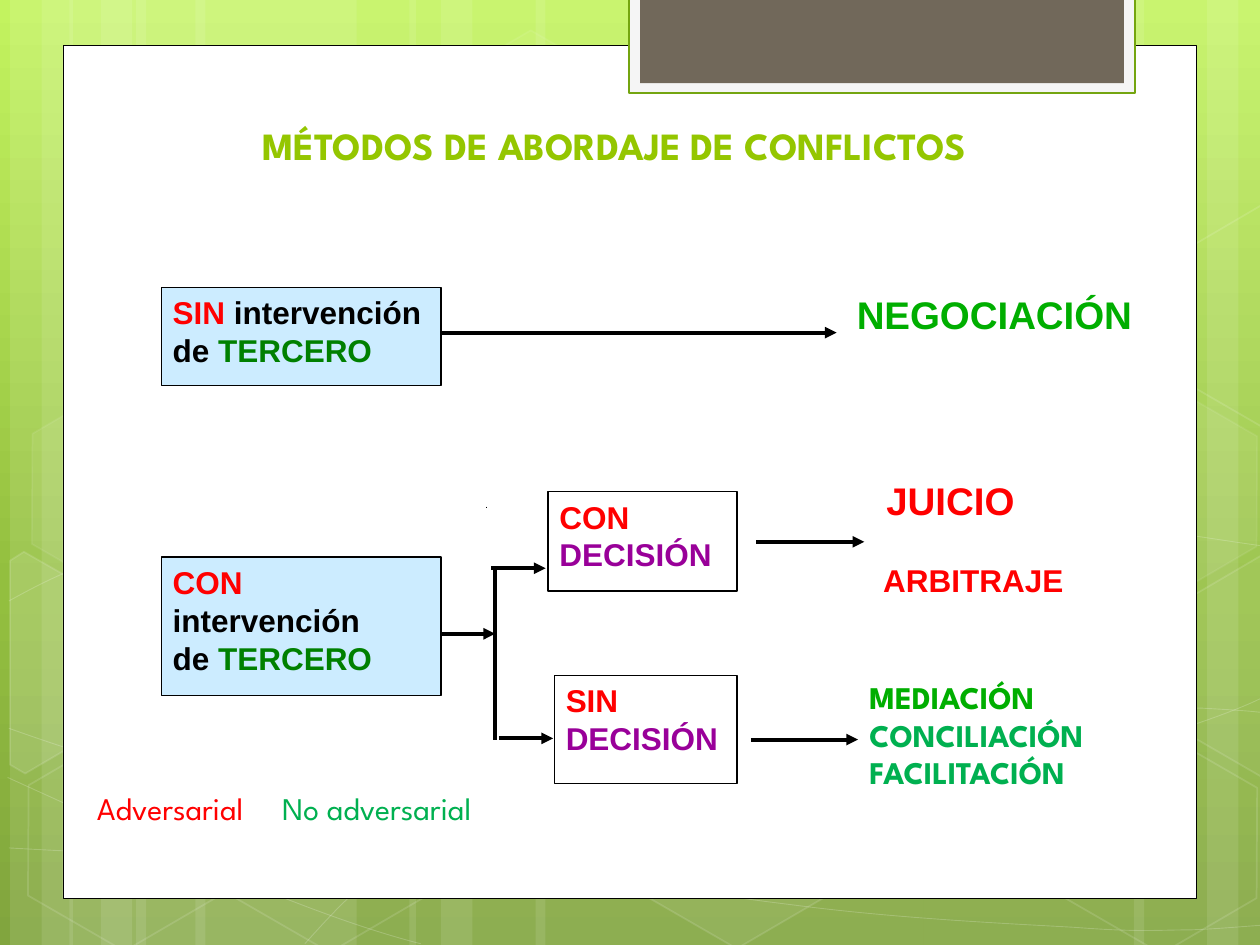
import copy

import pptx
import pptx.dml.color
import pptx.enum.shapes
import pptx.enum.text
import pptx.oxml
import pptx.oxml.ns
import pptx.util

Inches, Pt = pptx.util.Inches, pptx.util.Pt
SHAPE = pptx.enum.shapes.MSO_SHAPE
CONNECTOR = pptx.enum.shapes.MSO_CONNECTOR
ALIGN = pptx.enum.text.PP_ALIGN
ANCHOR = pptx.enum.text.MSO_ANCHOR
qn = pptx.oxml.ns.qn

WHITE, BLACK, RED, GREEN = "FFFFFF", "000000", "FF0000", "00AE00"
DARK_GREEN, LIGHT_GREEN, PURPLE, SKY = "008000", "00B050", "990099", "CCECFF"
SPARTAN = "League Spartan"

GRADIENT = [(0, "C3F35F"), (0.62, "93BF3F"), (1, "81A53E")]
# left, width of the full-height stripes
STRIPES = [(1.08, 1.75), (0.08, 0.5), (0.33, 0.83), (1.55, 1.75), (0.55, 0.5), (0.8, 0.83),
           (7.33, 1.75), (9.58, 0.5), (9, 0.83), (4.25, 3.08), (3.25, 0.5), (3.5, 0.83)]
# start point, then segments: an end point, or two control points and an end point
CURVES = [
    [(0.07, 6.73), (0.61, 6.76, 1.15, 6.79, 1.9, 6.78), (2.65, 6.77, 3.58, 6.75, 4.58, 6.65),
     (5.58, 6.55, 7, 6.36, 7.92, 6.17), (8.83, 5.98, 9.77, 5.68, 10.07, 5.51)],
    [(0.07, 4.77), (0.36, 4.61, 0.65, 4.46, 1.21, 4.31), (1.78, 4.16, 2.59, 3.94, 3.47, 3.87),
     (4.36, 3.8, 5.44, 3.79, 6.54, 3.87), (7.64, 3.95, 9.47, 4.26, 10.07, 4.34)],
    [(0.06, 6.17), (1.27, 6.72, 2.47, 7.27, 3.34, 7.49)],
    [(0.07, 5.78), (0.38, 5.89, 0.7, 6, 1.28, 6.16), (1.86, 6.31, 2.73, 6.56, 3.57, 6.73),
     (4.4, 6.9, 5.45, 7.08, 6.28, 7.18), (7.11, 7.29, 8, 7.33, 8.53, 7.36),
     (9.05, 7.4, 9.19, 7.38, 9.45, 7.38), (9.71, 7.37, 9.89, 7.35, 10.07, 7.34)],
    [(2.42, 7.49), (2.6, 7.29, 2.78, 7.09, 3.02, 6.91), (3.26, 6.73, 3.6, 6.53, 3.88, 6.39),
     (4.16, 6.25, 4.33, 6.19, 4.7, 6.09), (5.06, 5.99, 5.73, 5.85, 6.08, 5.78),
     (6.44, 5.71, 6.49, 5.71, 6.8, 5.69), (7.11, 5.66, 7.6, 5.63, 7.94, 5.62),
     (8.29, 5.61, 8.86, 5.62, 8.86, 5.62), (9.53, 5.62),
     (9.71, 5.63, 9.88, 5.64, 9.97, 5.65), (10.06, 5.66, 10.03, 5.65, 10.06, 5.66)],
]
# left, top, fill opacity, line opacity (percent)
HEXAGONS = [(3.34, 0.36, 4, 8), (4.97, 5.89, 6, 12), (0.11, 5.91, 0, 12), (0.14, 3.12, 7, 8),
            (1.74, 5.92, 0, 12), (7.53, 4.53, 10, 12), (8.34, 5.93, 0, 12), (8.34, 3.14, 7, 8)]
# hexagons cut by the slide edge: points, fill opacity
CUT_HEXAGONS = [
    ([(0.08, 4.45), (0.19, 4.38), (0.96, 4.82), (0.95, 5.7), (0.2, 6.14), (0.08, 6.07)], 10),
    ([(9.26, 4.85), (10.01, 4.41), (10.09, 4.46), (10.09, 6.13), (10.02, 6.17), (9.26, 5.73)], 4),
    ([(9.26, 2.07), (10.01, 1.63), (10.1, 1.68), (10.09, 3.35), (10.02, 3.39), (9.26, 2.95)], 0),
]
# box, fill, line colour, line width
PANELS = [((0.5, 0.36, 9, 6.77), WHITE, BLACK, 0.5),
          ((4.99, -0.02, 4.02, 0.76), "F5F5F5", "74A510", 1.25),
          ((5.08, -0.02, 3.84, 0.68), "71685A", None, 0)]

TITLE = [[("MÉTODOS DE ABORDAJE DE CONFLICTOS", "94C600")]]
THIRD_PARTY = [("de ", BLACK), ("TERCERO", DARK_GREEN)]
DECISION = [("DECISIÓN", PURPLE)]
BOXES = [
    ((1.28, 4.42, 2.22, 1.1), SKY, [[("CON ", RED), ("intervención", BLACK)], THIRD_PARTY]),
    ((1.28, 2.28, 2.22, 0.78), SKY, [[("SIN ", RED), ("intervención", BLACK)], THIRD_PARTY]),
    ((4.4, 5.36, 1.45, 0.86), WHITE, [[("SIN", RED)], DECISION]),
    ((4.35, 3.9, 1.5, 0.79), WHITE, [[("CON", RED)], DECISION]),
]
NEGOTIATION = [[("NEGOCIACIÓN", GREEN)]]
RULINGS = [[(" JUICIO", RED)], [(" ARBITRAJE", RED)]]
AGREEMENTS = [[("MEDIACIÓN", GREEN)], [("CONCILIACIÓN", LIGHT_GREEN)],
              [("FACILITACIÓN", LIGHT_GREEN)]]
LEGEND = [[("Adversarial", RED), ("\tNo adversarial", LIGHT_GREEN)]]
ARROWS = [(3.5, 5.03, 3.93, 5.03), (3.9, 4.51, 4.33, 4.51), (3.96, 5.86, 4.39, 5.86),
          (3.5, 2.64, 6.64, 2.64), (6, 4.3, 6.86, 4.3), (5.96, 5.87, 6.81, 5.87)]
TRUNK = (3.93, 4.51, 3.93, 5.87)
DOT = (3.86, 4.02, 3.86, 4.03)


def rgb(color):
    return pptx.dml.color.RGBColor.from_string(color)


def sub(parent, tag, **attributes):
    child = pptx.oxml.parse_xml(f'<{tag} {pptx.oxml.ns.nsdecls("a")}/>')
    for name, value in attributes.items():
        child.set(name, str(value))
    parent.append(child)
    return child


def style(s, fill=None, line=None, width=0.75):
    s.shadow.inherit = False
    if fill:
        s.fill.solid()
        s.fill.fore_color.rgb = rgb(fill)
    else:
        s.fill.background()
    if line:
        s.line.color.rgb = rgb(line)
        s.line.width = Pt(width)
    else:
        s.line.fill.background()


def veil(s, fill_alpha=0, line_alpha=0, width=1):
    """Paint a shape in see-through white; opacities are percentages."""
    style(s, WHITE if fill_alpha else None, WHITE if line_alpha else None, width)
    alphas = [a for a in (fill_alpha, line_alpha) if a]
    for color, alpha in zip(s.element.spPr.iter(qn("a:srgbClr")), alphas):
        sub(color, "a:alpha", val=alpha * 1000)


def add_shape(kind, box):
    return shapes.add_shape(kind, *map(Inches, box))


def add_outline(points, close):
    start, *rest = [(Inches(x), Inches(y)) for x, y in points]
    builder = shapes.build_freeform(*start)
    builder.add_line_segments(rest, close=close)
    return builder.convert_to_shape()


def add_curve(start, *segments):
    """Draw all points as a polyline, then turn each control triple into a cubic segment."""
    points = [pair for seg in segments for pair in zip(seg[::2], seg[1::2])]
    s = add_outline([start, *points], False)
    lines = iter(list(s.element.spPr.iter(qn("a:lnTo"))))
    for seg in segments:
        group = [next(lines) for _ in seg[::2]]
        if len(group) == 3:
            outline = group[0].getparent()
            place = outline.index(group[0])
            cubic = sub(outline, "a:cubicBezTo")
            for line in group:
                cubic.append(line[0])
                outline.remove(line)
            outline.insert(place, cubic)
    return s


def write(s, paragraphs, size=18, font="Arial", bold=True, align=ALIGN.LEFT, anchor=ANCHOR.TOP):
    tf = s.text_frame
    tf.word_wrap = True
    tf.vertical_anchor = anchor
    tf.margin_left = tf.margin_right = Inches(0.09)
    tf.margin_top = tf.margin_bottom = Inches(0.05)
    for i, runs in enumerate(paragraphs):
        p = tf.add_paragraph() if i else tf.paragraphs[0]
        p.alignment = align
        for text, color in runs:
            r = p.add_run()
            r.text = text
            r.font.name, r.font.size, r.font.bold = font, Pt(size), bold
            r.font.color.rgb = rgb(color)
    return tf


def add_text(box, paragraphs, **options):
    return write(shapes.add_textbox(*map(Inches, box)), paragraphs, **options)


def add_line(ends, width=2.25, arrow=False, kind=CONNECTOR.STRAIGHT):
    s = shapes.add_connector(kind, *map(Inches, ends))
    s.line.color.rgb = rgb(BLACK)
    s.line.width = Pt(width)
    if arrow:
        sub(s.element.spPr.find(qn("a:ln")), "a:tailEnd", type="triangle")
    sub(s.element.spPr, "a:effectLst")


prs = pptx.Presentation()
prs.slide_width, prs.slide_height = Inches(10), Inches(7.5)
slide = prs.slides.add_slide(prs.slide_layouts[6])
shapes = slide.shapes

background = slide.background.fill
background.gradient()
background.gradient_angle = 270
stop_list = slide.element.find(".//" + qn("a:gsLst"))
stop_list.append(copy.deepcopy(stop_list[-1]))
for stop, (position, color) in zip(background.gradient_stops, GRADIENT):
    stop.position = position
    stop.color.rgb = rgb(color)

for left, width in STRIPES:
    veil(add_shape(SHAPE.RECTANGLE, (left, 0, width, 7.5)), 10)
for curve in CURVES:
    veil(add_curve(*curve), 0, 20, 0.5)
for left, top, fill_alpha, line_alpha in HEXAGONS:
    s = add_shape(SHAPE.HEXAGON, (left, top, 1.75, 1.52))
    s.adjustments[0], s.adjustments[1] = 0.285, 1.155
    s.rotation = 30
    veil(s, fill_alpha, line_alpha)
for points, fill_alpha in CUT_HEXAGONS:
    veil(add_outline(points, True), fill_alpha, 12)
for box, fill, line, width in PANELS:
    style(add_shape(SHAPE.RECTANGLE, box), fill, line, width)

tf = add_text((0.27, 0.48, 9.21, 1.3), TITLE, size=22, font=SPARTAN,
              align=ALIGN.CENTER, anchor=ANCHOR.MIDDLE)
tf.paragraphs[0].line_spacing = 1.12
for box, fill, paragraphs in BOXES:
    s = add_shape(SHAPE.RECTANGLE, box)
    style(s, fill, BLACK)
    write(s, paragraphs)

add_line(DOT, width=0.75, kind=CONNECTOR.ELBOW)
add_line(TRUNK)
for ends in ARROWS:
    add_line(ends, arrow=True)

tf = add_text((6.86, 3.74, 2.43, 1.36), RULINGS)
tf.paragraphs[0].runs[0].font.size = Pt(22)
tf.paragraphs[1].space_before = Pt(21.5)
add_text((6.81, 5.33, 2.07, 1.1), AGREEMENTS, font=SPARTAN)
add_text((6.71, 2.26, 2.86, 1.1), NEGOTIATION, size=22)
tf = add_text((0.68, 6.21, 5, 0.4), LEGEND, font=SPARTAN, bold=False)
tabs = sub(tf.paragraphs[0]._p.get_or_add_pPr(), "a:tabLst")
sub(tabs, "a:tab", pos=Inches(1.47), algn="l")

prs.save("out.pptx")
